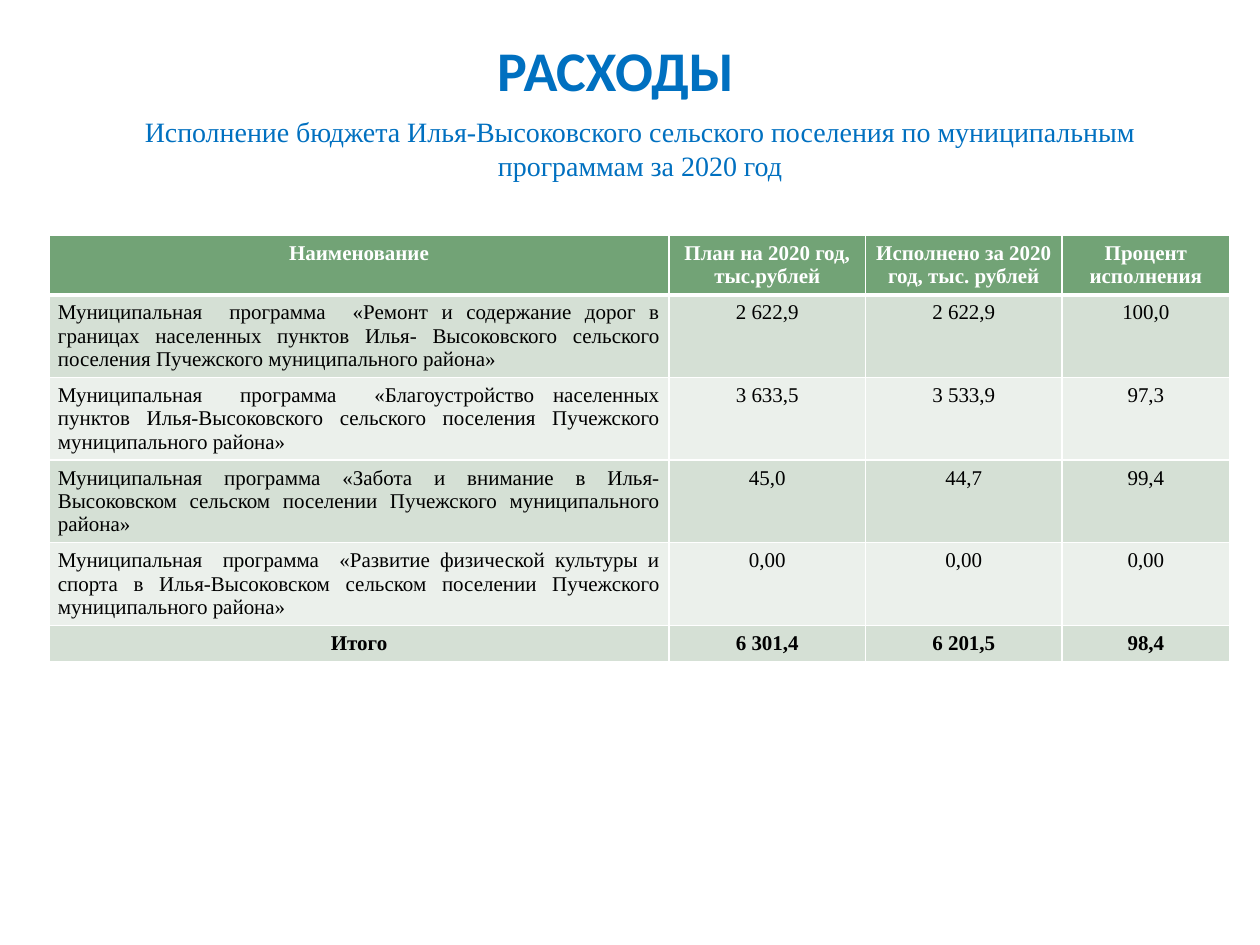
from pptx import Presentation
from pptx.dml.color import RGBColor
from pptx.enum.text import MSO_ANCHOR, MSO_AUTO_SIZE, PP_ALIGN
from pptx.oxml import parse_xml
from pptx.oxml.ns import nsdecls
from pptx.util import Inches, Pt

CENTER, JUSTIFY = PP_ALIGN.CENTER, PP_ALIGN.JUSTIFY
SERIF = "Times New Roman"
COLORS = {
    "heading": "0070C0",
    "header": "72A376",
    "odd": "D5E0D5",
    "even": "EBF0EB",
    "white": "FFFFFF",
    "text": "000000",
}

TITLE = "РАСХОДЫ"
SUBTITLE = ("Исполнение бюджета Илья-Высоковского сельского поселения "
            "по муниципальным программам за 2020 год")
ROWS = [
    ("Наименование", "План на 2020 год,\nтыс.рублей",
     "Исполнено за 2020 год, тыс. рублей", "Процент исполнения"),
    ("Муниципальная  программа  «Ремонт и содержание дорог в границах населенных "
     "пунктов Илья- Высоковского сельского поселения Пучежского муниципального района»",
     "2 622,9", "2 622,9", "100,0"),
    ("Муниципальная  программа  «Благоустройство населенных пунктов "
     "Илья-Высоковского сельского поселения Пучежского муниципального района»",
     "3 633,5", "3 533,9", "97,3"),
    ("Муниципальная программа «Забота и внимание в Илья- Высоковском сельском "
     "поселении Пучежского муниципального района»",
     "45,0", "44,7", "99,4"),
    ("Муниципальная  программа  «Развитие физической культуры и спорта в "
     "Илья-Высоковском сельском поселении Пучежского муниципального района»",
     "0,00", "0,00", "0,00"),
    ("Итого", "6 301,4", "6 201,5", "98,4"),
]
COLUMN_WIDTHS = [4.92, 1.56, 1.56, 1.33]
ROW_HEIGHTS = [0.47, 0.65, 0.65, 0.65, 0.65, 0.28]
LAST_ROW = len(ROWS) - 1


def style(para, size, font_name, color, bold, align):
    para.alignment = align
    para.font.size = Pt(size)
    para.font.name = font_name
    para.font.bold = bold
    para.font.color.rgb = RGBColor.from_string(COLORS[color])


def fill_heading(box, text, place, size, font_name, bold):
    box.left, box.top, box.width, box.height = map(Inches, place)
    frame = box.text_frame
    frame.text = text
    frame.word_wrap = True
    frame.auto_size = MSO_AUTO_SIZE.NONE
    frame.vertical_anchor = MSO_ANCHOR.TOP
    para = frame.paragraphs[0]
    para.space_before = Pt(0)
    style(para, size, font_name, "heading", bold, CENTER)


def set_borders(cell, top, bottom):
    """Draw white cell edges; top and bottom are widths in points."""
    widths = {"lnL": 0.96, "lnR": 0.96, "lnT": top, "lnB": bottom}
    properties = cell._tc.get_or_add_tcPr()
    for index, (edge, width) in enumerate(widths.items()):
        properties.insert(index, parse_xml(
            f'<a:{edge} {nsdecls("a")} w="{int(Pt(width))}"><a:solidFill>'
            f'<a:srgbClr val="{COLORS["white"]}"/></a:solidFill></a:{edge}>'))


def fill_cell(cell, text, row, column):
    header = row == 0
    band = "header" if header else "odd" if row % 2 else "even"
    cell.fill.solid()
    cell.fill.fore_color.rgb = RGBColor.from_string(COLORS[band])
    cell.margin_left = cell.margin_right = Inches(0.07)
    cell.margin_top = cell.margin_bottom = Inches(0.05)
    cell.text = text
    is_program = column == 0 and 0 < row < LAST_ROW
    for para in cell.text_frame.paragraphs:
        style(para, 12, SERIF, "white" if header else "text",
              row in (0, LAST_ROW), JUSTIFY if is_program else CENTER)
    set_borders(cell, 3 if row == 1 else 0.96, 3 if header else 0.96)


deck = Presentation()
deck.slide_width, deck.slide_height = Inches(10), Inches(7.5)
page = deck.slides.add_slide(deck.slide_layouts[0])
fill_heading(page.shapes.title, TITLE, (1.02, 0.23, 7.73, 0.63), 32, "Calibri", True)
fill_heading(page.placeholders[1], SUBTITLE, (0.47, 0.86, 9.22, 0.33), 16, SERIF, False)

table = page.shapes.add_table(
    len(ROWS), len(COLUMN_WIDTHS), Inches(0.39), Inches(1.87),
    Inches(sum(COLUMN_WIDTHS)), Inches(sum(ROW_HEIGHTS))).table
for column, width in zip(table.columns, COLUMN_WIDTHS):
    column.width = Inches(width)
for row, height in zip(table.rows, ROW_HEIGHTS):
    row.height = Inches(height)
for row_index, texts in enumerate(ROWS):
    for column_index, text in enumerate(texts):
        fill_cell(table.cell(row_index, column_index), text, row_index, column_index)

deck.save("out.pptx")
